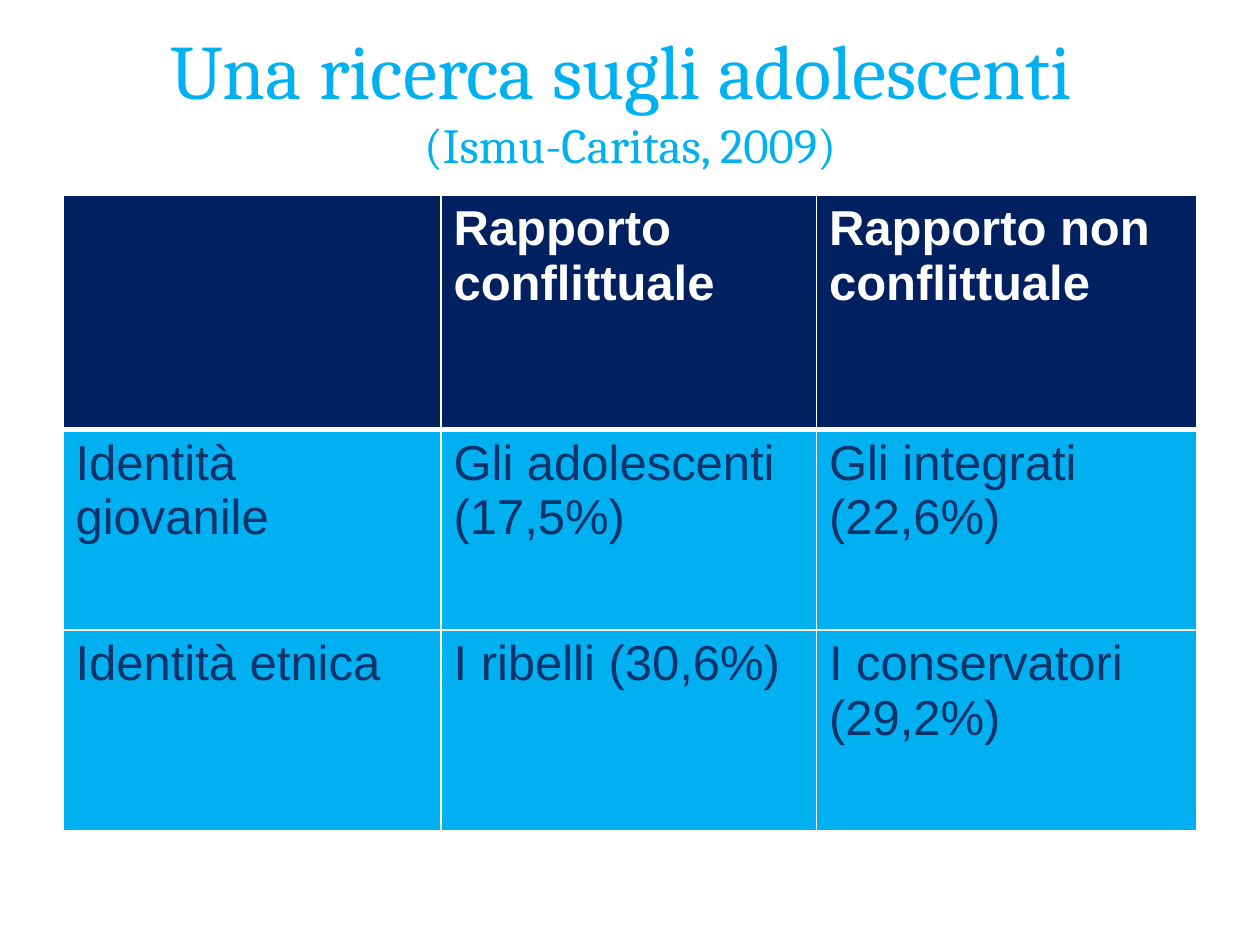
from dataclasses import dataclass

from lxml.etree import SubElement
from pptx import Presentation
from pptx.dml.color import RGBColor
from pptx.enum.text import MSO_ANCHOR, PP_ALIGN
from pptx.oxml.ns import qn
from pptx.util import Inches, Pt


@dataclass(frozen=True)
class Theme:
    sky: str = "00B0F0"
    navy: str = "002060"
    ink: str = "0C346B"
    white: str = "FFFFFF"
    heading_face: str = "Cambria"
    body_face: str = "Arial"
    heading_size: int = 44
    body_size: int = 28
    rule: int = 1
    header_rule: int = 3


THEME = Theme()
SLIDE_WIDTH, SLIDE_HEIGHT = Inches(10), Inches(7.5)
MARGIN = int(SLIDE_WIDTH * 0.05)
CONTENT_WIDTH = SLIDE_WIDTH - 2 * MARGIN
TITLE_HEIGHT = Inches(1.55)
COLUMN_WIDTHS = (3, 2.98, 3.02)
ROW_HEIGHTS = (1.86, 1.59, 1.59)
FINDINGS = (
    ("", "Rapporto conflittuale", "Rapporto non conflittuale"),
    ("Identità giovanile", "Gli adolescenti (17,5%)", "Gli integrati (22,6%)"),
    ("Identità etnica", "I ribelli (30,6%)", "I conservatori (29,2%)"),
)


def format_font(font, color, **values):
    for attribute, value in values.items():
        setattr(font, attribute, value)
    font.color.rgb = RGBColor.from_string(color)


def write_heading(slide):
    heading = slide.shapes.title
    place = dict(left=MARGIN, top=0, width=CONTENT_WIDTH, height=TITLE_HEIGHT)
    for attribute, value in place.items():
        setattr(heading, attribute, value)
    heading.text_frame.vertical_anchor = MSO_ANCHOR.MIDDLE
    paragraph = heading.text_frame.paragraphs[0]
    paragraph.alignment = PP_ALIGN.CENTER
    topic = paragraph.add_run()
    topic.text = "Una ricerca sugli adolescenti "
    paragraph.add_line_break()
    citation = paragraph.add_run()
    citation.text = "(Ismu-Caritas, 2009)"
    for run, size in ((topic, THEME.heading_size), (citation, THEME.body_size)):
        format_font(run.font, THEME.sky, name=THEME.heading_face, size=Pt(size))


def draw_borders(cell, widths):
    properties = cell._tc.get_or_add_tcPr()
    for position, (side, width) in enumerate(widths.items()):
        border = SubElement(properties, qn(f"a:{side}"), w=str(Pt(width)))
        fill = SubElement(border, qn("a:solidFill"))
        SubElement(fill, qn("a:srgbClr"), val=THEME.white)
        properties.insert(position, border)


def format_cell(cell, text, row):
    is_header = row == 0
    cell.fill.solid()
    cell.fill.fore_color.rgb = RGBColor.from_string(
        THEME.navy if is_header else THEME.sky
    )
    widths = dict.fromkeys(("lnL", "lnR", "lnT", "lnB"), THEME.rule)
    if is_header:
        widths["lnB"] = THEME.header_rule
    elif row == 1:
        widths["lnT"] = THEME.header_rule
    draw_borders(cell, widths)
    cell.text = text
    format_font(
        cell.text_frame.paragraphs[0].font,
        THEME.white if is_header else THEME.ink,
        name=THEME.body_face,
        size=Pt(THEME.body_size),
        bold=is_header,
    )
    for run in cell.text_frame.paragraphs[0].runs:
        format_font(
            run.font,
            THEME.white if is_header else THEME.ink,
            name=THEME.body_face,
            size=Pt(THEME.body_size),
            bold=is_header,
        )


def add_findings(slide):
    findings = slide.shapes.add_table(
        len(ROW_HEIGHTS), len(COLUMN_WIDTHS), MARGIN, TITLE_HEIGHT,
        CONTENT_WIDTH, Inches(sum(ROW_HEIGHTS)),
    ).table
    for column, width in zip(findings.columns, COLUMN_WIDTHS):
        column.width = Inches(width)
    for row, height in zip(findings.rows, ROW_HEIGHTS):
        row.height = Inches(height)
    for row, texts in enumerate(FINDINGS):
        for column, text in enumerate(texts):
            format_cell(findings.cell(row, column), text, row)


def main():
    presentation = Presentation()
    presentation.slide_width = SLIDE_WIDTH
    presentation.slide_height = SLIDE_HEIGHT
    slide = presentation.slides.add_slide(presentation.slide_layouts[5])
    write_heading(slide)
    add_findings(slide)
    presentation.save("out.pptx")


if __name__ == "__main__":
    main()
